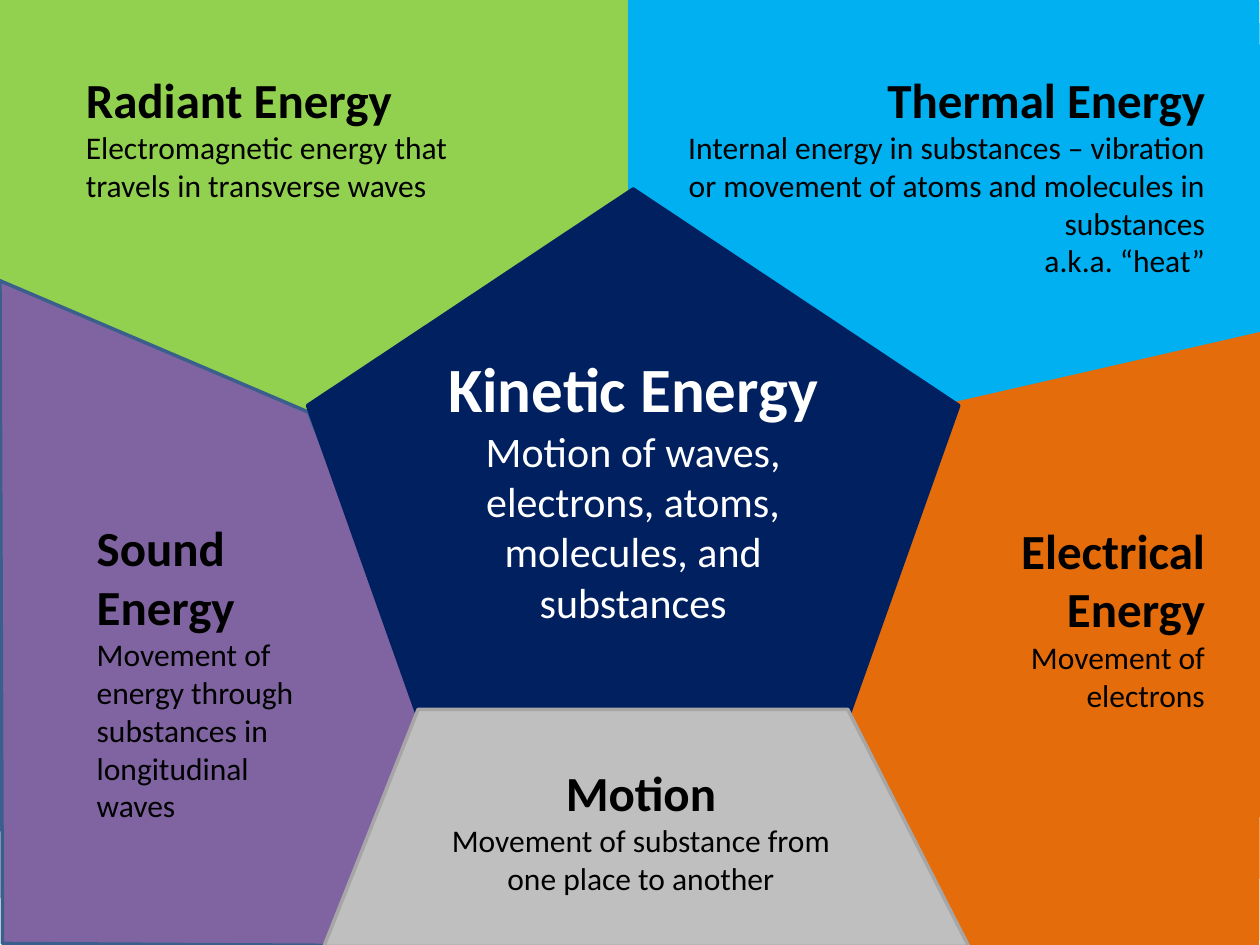
from pptx import Presentation
from pptx.dml.color import RGBColor
from pptx.enum.shapes import MSO_SHAPE
from pptx.enum.text import MSO_ANCHOR, MSO_AUTO_SIZE, PP_ALIGN
from pptx.util import Cm, Pt

FONT = "Calibri"
LEFT, CENTER, RIGHT = PP_ALIGN.LEFT, PP_ALIGN.CENTER, PP_ALIGN.RIGHT

# Corners in cm, fill, line
REGIONS = {
    "thermal": ([(12.7, 0), (25.35, 0), (25.43, 6.88), (12.7, 9.54)], "00B0F0", "00B0F0"),
    "sound": ([(0, 5.66), (6.22, 8.31), (10.49, 19.08), (0.05, 19.02)], "8064A2", "3A5F8C"),
    "electrical": ([(16.76, 8.71), (25.4, 6.73), (25.35, 19.05), (16.69, 19.05)],
                   "E46C0A", "E46C0A"),
    "motion": ([(8.43, 14.3), (17.09, 14.3), (19.53, 19.08), (6.53, 19.08)],
               "BFBFBF", "A6A6A6"),
}

# Left, top, width, height in cm, alignment, heading, description paragraphs
LABELS = [
    (18.62, 10.36, 5.92, 4.95, RIGHT, "Electrical Energy", ["Movement of electrons"]),
    (8.69, 15.24, 8.46, 3.76, CENTER, "Motion",
     ["Movement of substance from one place to another"]),
    (1.7, 10.31, 5.28, 7.26, LEFT, "Sound Energy",
     ["Movement of energy through substances in longitudinal waves"]),
    (1.48, 1.27, 9.32, 3.76, LEFT, "Radiant Energy",
     ["Electromagnetic energy that travels in transverse waves"]),
    (13.54, 1.27, 11, 5.31, RIGHT, "Thermal Energy",
     ["Internal energy in substances – vibration or movement of atoms and "
      "molecules in substances", "a.k.a. “heat”"]),
]


def color(hex_code):
    return RGBColor.from_string(hex_code)


def paint(shape, fill, line):
    shape.shadow.inherit = False
    shape.fill.solid()
    shape.fill.fore_color.rgb = color(fill)
    shape.line.color.rgb = color(line)
    shape.line.width = Pt(2)


def add_preset(slide, preset, left, top, width, height, fill):
    shape = slide.shapes.add_shape(preset, Cm(left), Cm(top), Cm(width), Cm(height))
    paint(shape, fill, fill)
    return shape


def add_region(slide, name):
    corners, fill, line = REGIONS[name]
    start, *others = [(Cm(x), Cm(y)) for x, y in corners]
    builder = slide.shapes.build_freeform(*start)
    builder.add_line_segments(others, close=True)
    paint(builder.convert_to_shape(), fill, line)


def write_text(frame, heading, details, sizes, align, font_color):
    """Write a bold heading and plain detail paragraphs; sizes is (heading, detail)."""
    frame.word_wrap = True
    for index, text in enumerate([heading, *details]):
        para = frame.add_paragraph() if index else frame.paragraphs[0]
        para.alignment = align
        span = para.add_run()
        span.text = text
        span.font.name = FONT
        span.font.size = Pt(sizes[min(index, 1)])
        span.font.bold = index == 0
        span.font.color.rgb = color(font_color)


def add_label(slide, left, top, width, height, align, heading, details):
    box = slide.shapes.add_textbox(Cm(left), Cm(top), Cm(width), Cm(height))
    write_text(box.text_frame, heading, details, (28, 18), align, "000000")
    box.text_frame.auto_size = MSO_AUTO_SIZE.SHAPE_TO_FIT_TEXT


def add_center(slide):
    pentagon = add_preset(slide, MSO_SHAPE.REGULAR_PENTAGON, 6.2, 3.81, 13.13, 11.43, "002060")
    frame = pentagon.text_frame
    frame.vertical_anchor = MSO_ANCHOR.MIDDLE
    frame.margin_bottom = Cm(2.19)
    write_text(frame, "Kinetic Energy",
               ["Motion of waves, electrons, atoms, molecules, and substances"],
               (36, 24), CENTER, "FFFFFF")


def main():
    deck = Presentation()
    deck.slide_width, deck.slide_height = Cm(25.4), Cm(19.05)
    slide = deck.slides.add_slide(deck.slide_layouts[6])

    add_preset(slide, MSO_SHAPE.RECTANGLE, 0, 0, 12.7, 9.53, "92D050")
    for name in ("thermal", "sound", "electrical"):
        add_region(slide, name)
    add_center(slide)
    add_region(slide, "motion")
    for label in LABELS:
        add_label(slide, *label)

    deck.save("out.pptx")


if __name__ == "__main__":
    main()
